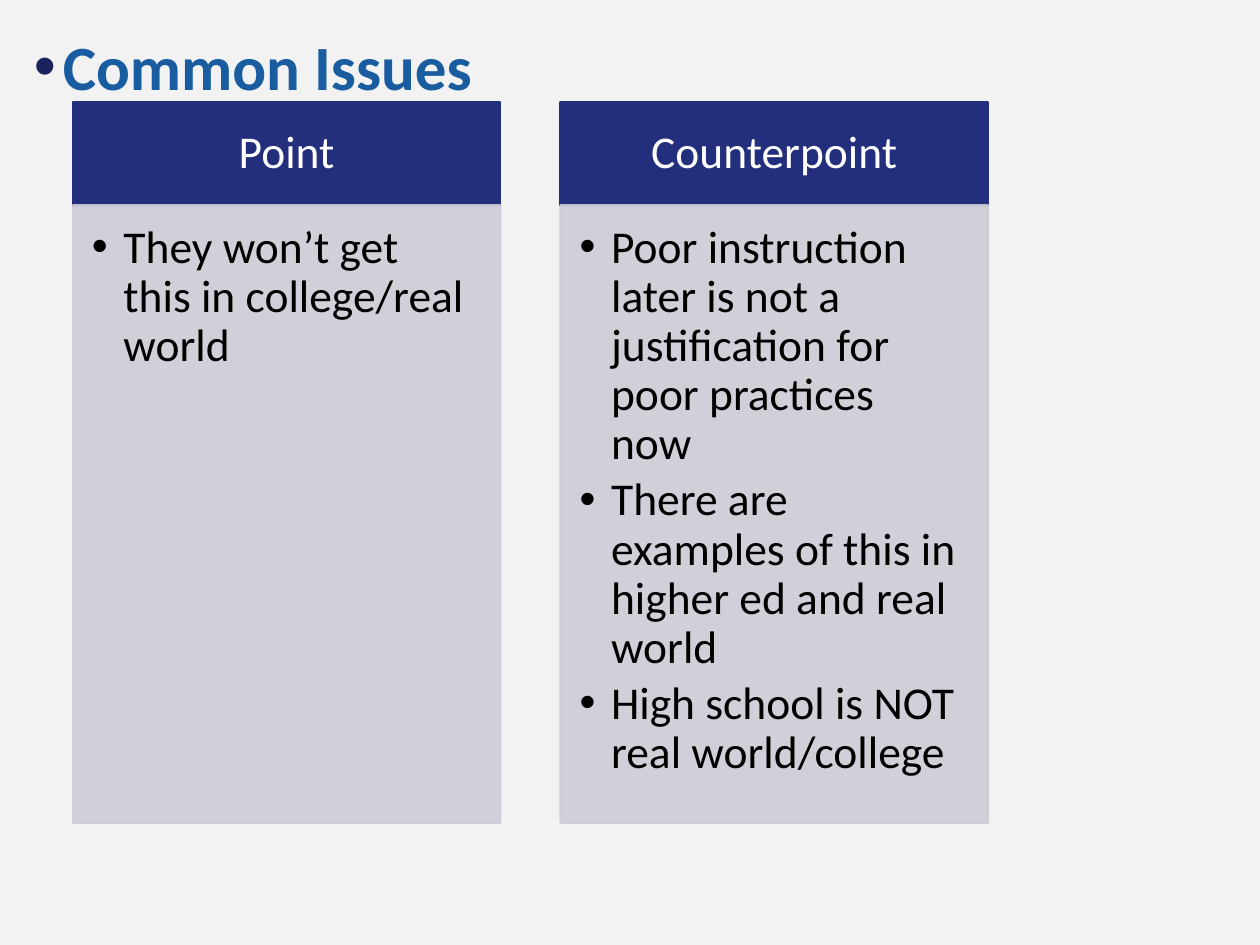
from dataclasses import dataclass

from lxml.etree import SubElement
from pptx import Presentation
from pptx.dml.color import RGBColor
from pptx.enum.shapes import MSO_SHAPE
from pptx.enum.text import MSO_ANCHOR, PP_ALIGN
from pptx.oxml.ns import qn
from pptx.shapes.autoshape import Shape
from pptx.slide import Slide
from pptx.util import Inches, Pt

COLORS = {
    "background": "F2F2F2",
    "title": "1A5CA0",
    "title_bullet": "1A235D",
    "header": "232F7C",
    "header_text": "FFFFFF",
    "body": "CDCDD7",
    "body_text": "000000",
}
FONT = "Calibri"
COLUMN_LEFT = 0.58
COLUMN_STEP = 3.87
COLUMN_WIDTH = 3.39
HEADER_TOP = 0.81
HEADER_HEIGHT = 0.82
BODY_HEIGHT = 4.9


@dataclass
class Column:
    heading: str
    points: list[str]


COLUMNS = [
    Column("Point", ["They won’t get this in college/real world"]),
    Column(
        "Counterpoint",
        [
            "Poor instruction later is not a justification for poor practices now",
            "There are examples of this in higher ed and real world",
            "High school is NOT real world/college",
        ],
    ),
]


def color(name: str) -> RGBColor:
    return RGBColor.from_string(COLORS[name])


def add_bullet(paragraph, color_name: str, indent: float) -> None:
    properties = paragraph._p.get_or_add_pPr()
    properties.set("marL", str(Inches(indent)))
    properties.set("indent", str(-Inches(indent)))
    bullet_color = SubElement(properties, qn("a:buClr"))
    SubElement(bullet_color, qn("a:srgbClr"), val=COLORS[color_name])
    SubElement(properties, qn("a:buFont"), typeface="Arial")
    SubElement(properties, qn("a:buChar"), char="•")


def write_text(
    shape: Shape,
    lines: list[str],
    *,
    size: float,
    color_name: str,
    bold: bool = False,
    align: PP_ALIGN = PP_ALIGN.LEFT,
    anchor: MSO_ANCHOR = MSO_ANCHOR.MIDDLE,
    insets: tuple[float, float, float, float] = (0.1, 0.05, 0.1, 0.05),
    line_spacing: float = 0.9,
    space_after: float = 0,
    bullet_color: str | None = None,
    indent: float = 0.25,
) -> None:
    frame = shape.text_frame
    frame.word_wrap = True
    frame.vertical_anchor = anchor
    frame.margin_left, frame.margin_top, frame.margin_right, frame.margin_bottom = map(Inches, insets)
    for index, line in enumerate(lines):
        paragraph = frame.add_paragraph() if index else frame.paragraphs[0]
        if bullet_color:
            add_bullet(paragraph, bullet_color, indent)
        paragraph.alignment = align
        paragraph.line_spacing = line_spacing
        paragraph.space_after = Pt(space_after)
        run = paragraph.add_run()
        run.text = line
        run.font.name = FONT
        run.font.size = Pt(size)
        run.font.bold = bold
        run.font.color.rgb = color(color_name)


def add_panel(slide: Slide, left: float, top: float, height: float, color_name: str, opacity: int = 100) -> Shape:
    panel = slide.shapes.add_shape(
        MSO_SHAPE.RECTANGLE, Inches(left), Inches(top), Inches(COLUMN_WIDTH), Inches(height)
    )
    panel.shadow.inherit = False
    panel.fill.solid()
    panel.fill.fore_color.rgb = color(color_name)
    panel.line.color.rgb = color(color_name)
    panel.line.width = Pt(1.5)
    if opacity < 100:
        for element in panel._element.spPr.iter(qn("a:srgbClr")):
            SubElement(element, qn("a:alpha"), val=str(opacity * 1000))
    return panel


def add_column(slide: Slide, column: Column, left: float) -> None:
    header = add_panel(slide, left, HEADER_TOP, HEADER_HEIGHT, "header")
    write_text(
        header, [column.heading], size=26, color_name="header_text",
        align=PP_ALIGN.CENTER, insets=(0.2, 0.12, 0.2, 0.12),
    )
    body = add_panel(slide, left, HEADER_TOP + HEADER_HEIGHT, BODY_HEIGHT, "body", opacity=90)
    write_text(
        body, column.points, size=26, color_name="body_text", anchor=MSO_ANCHOR.TOP,
        insets=(0.15, 0.15, 0.2, 0.23), space_after=3.9, bullet_color="body_text",
    )


def main() -> None:
    presentation = Presentation()
    presentation.slide_width = Inches(10)
    presentation.slide_height = Inches(7.5)
    slide = presentation.slides.add_slide(presentation.slide_layouts[6])
    slide.background.fill.solid()
    slide.background.fill.fore_color.rgb = color("background")

    title = slide.shapes.add_textbox(Inches(0.17), Inches(0.17), Inches(9), Inches(0.7))
    write_text(
        title, ["Common Issues"], size=36, color_name="title", bold=True,
        line_spacing=1.0, bullet_color="title_bullet", indent=0.23,
    )
    for index, column in enumerate(COLUMNS):
        add_column(slide, column, COLUMN_LEFT + index * COLUMN_STEP)

    presentation.save("out.pptx")


if __name__ == "__main__":
    main()
